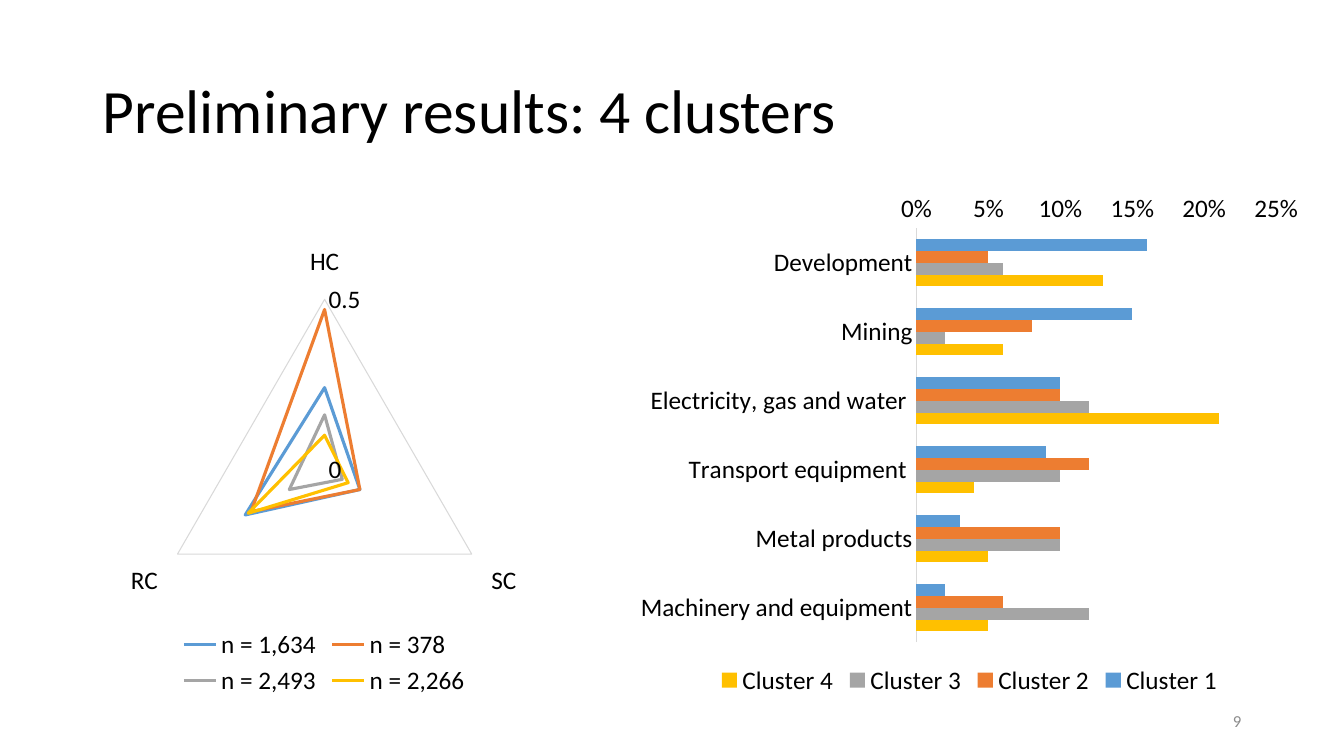
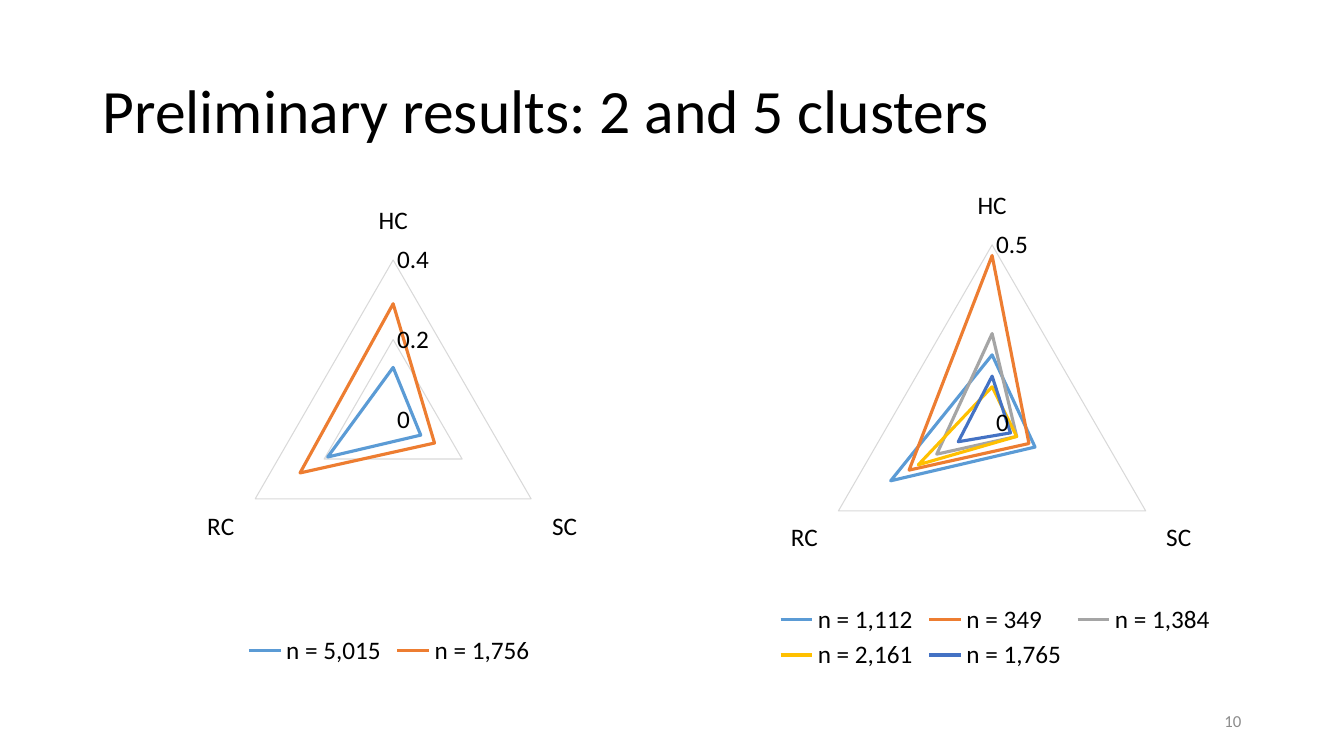
from pptx import Presentation
from pptx.chart.data import CategoryChartData
from pptx.dml.color import RGBColor
from pptx.enum.chart import XL_CHART_TYPE, XL_LEGEND_POSITION, XL_TICK_MARK
from pptx.enum.text import MSO_ANCHOR, PP_ALIGN
from pptx.oxml import parse_xml
from pptx.oxml.ns import nsdecls, qn
from pptx.util import Pt

RADAR = XL_CHART_TYPE.RADAR
BAR = XL_CHART_TYPE.BAR_CLUSTERED
BOTTOM = XL_LEGEND_POSITION.BOTTOM
NO_TICK = XL_TICK_MARK.NONE
MIDDLE = MSO_ANCHOR.MIDDLE
LEFT, RIGHT = PP_ALIGN.LEFT, PP_ALIGN.RIGHT

PX = 9144  # 100 px to the inch
FONT = "Calibri"
BLACK = RGBColor(0x00, 0x00, 0x00)
PAGE_GREY = RGBColor(0x8C, 0x8C, 0x8C)
GRID_GREY = RGBColor(0xD9, 0xD9, 0xD9)
SERIES_COLOURS = [
    RGBColor(0x5B, 0x9B, 0xD5),
    RGBColor(0xED, 0x7D, 0x31),
    RGBColor(0xA5, 0xA5, 0xA5),
    RGBColor(0xFF, 0xC0, 0x00),
    RGBColor(0x44, 0x72, 0xC4),
]

# Content
SLIDE_SIZE = (1333, 750)
TITLE_BOX = (92, 40, 1150, 145)
PAGE_BOX = (941, 695, 300, 40)
CAPITALS = ["HC", "SC", "RC"]
INDUSTRIES = ["Development", "Mining", "Electricity, gas and water ",
              "Transport equipment ", "Metal products",
              "Machinery and equipment"]

# A chart's scale is (maximum, major unit); plot is its plot area in px,
# measured from the chart's corner
SLIDES = [
    {"title": "Preliminary results: 4 clusters", "page": 9, "charts": [
        {"kind": RADAR, "box": (34, 169, 575, 526), "cats": CAPITALS,
         "scale": (0.5, 0.5), "plot": (107, 128, 362, 337),
         "series": [("n = 1,634", (0.24, 0.12, 0.27)),
                    ("n = 378", (0.47, 0.12, 0.25)),
                    ("n = 2,493", (0.16, 0.06, 0.12)),
                    ("n = 2,266", (0.1, 0.08, 0.26))]},
        {"kind": BAR, "box": (622, 182, 679, 513), "cats": INDUSTRIES,
         "scale": (0.25, 0.05),
         "series": [("Cluster 1", (0.16, 0.15, 0.1, 0.09, 0.03, 0.02)),
                    ("Cluster 2", (0.05, 0.08, 0.1, 0.12, 0.1, 0.06)),
                    ("Cluster 3", (0.06, 0.02, 0.12, 0.1, 0.1, 0.12)),
                    ("Cluster 4", (0.13, 0.06, 0.21, 0.04, 0.05, 0.05))]},
    ]},
    {"title": "Preliminary results: 2 and 5 clusters", "page": 10, "charts": [
        {"kind": RADAR, "box": (656, 142, 662, 528), "cats": CAPITALS,
         "scale": (0.5, 0.5), "plot": (152, 101, 352, 352),
         "series": [("n = 1,112", (0.19, 0.14, 0.33)),
                    ("n = 349", (0.47, 0.12, 0.27)),
                    ("n = 1,384", (0.25, 0.08, 0.18)),
                    ("n = 2,161", (0.1, 0.08, 0.24)),
                    ("n = 1,765", (0.13, 0.06, 0.11))]},
        {"kind": RADAR, "box": (66, 145, 640, 521), "cats": CAPITALS,
         "scale": (0.4, 0.2), "plot": (166, 91, 316, 360),
         "series": [("n = 5,015", (0.13, 0.08, 0.19)),
                    ("n = 1,756", (0.29, 0.12, 0.27))]},
    ]},
]


def emu(lengths):
    return [n * PX for n in lengths]


def style_font(font, size, colour):
    font.name = FONT
    font.size = Pt(size)
    font.color.rgb = colour


def add_text(slide, box, text, size, colour, align=LEFT, spacing=None):
    tf = slide.shapes.add_textbox(*emu(box)).text_frame
    tf.word_wrap = True
    tf.vertical_anchor = MIDDLE
    p = tf.paragraphs[0]
    p.text = text
    p.alignment = align
    p.line_spacing = spacing
    style_font(p.runs[0].font, size, colour)


def thin_line(line):
    line.color.rgb = GRID_GREY
    line.width = Pt(0.75)


def place_plot(chart, plot, width, height):
    area = chart._chartSpace.chart.plotArea
    for old in area.findall(qn("c:layout")):
        area.remove(old)
    sizes = "".join(
        f'<c:{tag} val="{length / whole}"/>'
        for tag, length, whole in zip("xywh", plot, (width, height) * 2))
    area.insert(0, parse_xml(
        f'<c:layout {nsdecls("c")}><c:manualLayout>'
        '<c:layoutTarget val="inner"/><c:xMode val="edge"/>'
        f'<c:yMode val="edge"/>{sizes}</c:manualLayout></c:layout>'))


def style_axes(chart, is_radar, scale):
    cat, val = chart.category_axis, chart.value_axis
    for axis in (cat, val):
        axis.major_tick_mark = axis.minor_tick_mark = NO_TICK
        style_font(axis.tick_labels.font, 18, BLACK)
    cat.has_major_gridlines = False
    thin_line(cat.format.line)
    cat.reverse_order = not is_radar
    val.format.line.fill.background()
    val.minimum_scale = 0
    val.maximum_scale, val.major_unit = scale
    val.tick_labels.number_format = "General" if is_radar else "0%"
    val.tick_labels.number_format_is_linked = False
    val.has_major_gridlines = is_radar
    if is_radar:
        thin_line(val.major_gridlines.format.line)


def add_chart(slide, kind, box, cats, scale, series, plot=None):
    is_radar = kind == RADAR
    data = CategoryChartData()
    data.categories = cats
    for name, values in series:
        data.add_series(name, values)
    chart = slide.shapes.add_chart(kind, *emu(box), data).chart
    chart.has_title = False
    style_font(chart.font, 18, BLACK)
    style_axes(chart, is_radar, scale)

    # Legend
    chart.has_legend = True
    chart.legend.position = BOTTOM
    chart.legend.include_in_layout = False
    style_font(chart.legend.font, 18, BLACK)

    # Series
    plot_group = chart.plots[0]
    plot_group.vary_by_categories = False
    for ser, colour in zip(plot_group.series, SERIES_COLOURS):
        if is_radar:
            ser.smooth = False
            ser.format.line.color.rgb = colour
            ser.format.line.width = Pt(2.25)
        else:
            ser.format.fill.solid()
            ser.format.fill.fore_color.rgb = colour
    if not is_radar:
        plot_group.gap_width = 182
    if plot:
        place_plot(chart, plot, *box[2:])


def main():
    prs = Presentation()
    prs.slide_width, prs.slide_height = emu(SLIDE_SIZE)
    for content in SLIDES:
        s = prs.slides.add_slide(prs.slide_layouts[6])
        add_text(s, TITLE_BOX, content["title"], 44, BLACK, spacing=0.9)
        add_text(s, PAGE_BOX, str(content["page"]), 12, PAGE_GREY, RIGHT)
        for chart in content["charts"]:
            add_chart(s, **chart)
    prs.save("out.pptx")


if __name__ == "__main__":
    main()
